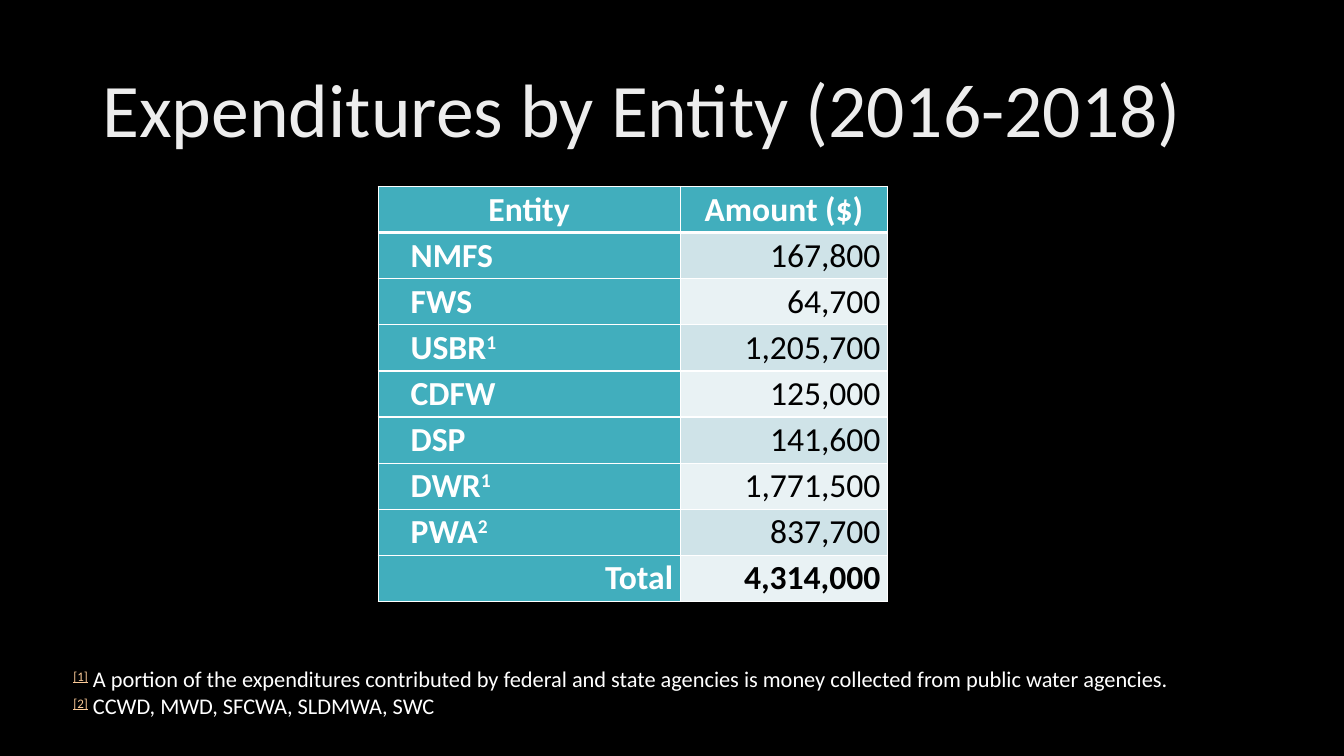
from lxml.etree import SubElement as Sub
from pptx import Presentation
from pptx.dml.color import RGBColor as RGB
from pptx.enum.text import MSO_ANCHOR as Anchor, PP_ALIGN as Align
from pptx.oxml.ns import qn
from pptx.util import Cm, Pt

WHITE, BLACK, TEAL, PEACH = "FFFFFF", "000000", "41AEBD", "FBCA98"
BANDS = "CFE3E8", "E9F2F4"

# Entity, footnote mark, amount
ROWS = [
    ("NMFS", "", "167,800"),
    ("FWS", "", "64,700"),
    ("USBR", "1", "1,205,700"),
    ("CDFW", "", "125,000"),
    ("DSP", "", "141,600"),
    ("DWR", "1", "1,771,500"),
    ("PWA", "2", "837,700"),
    ("Total", "", "4,314,000"),
]
NOTES = [
    ("[1]", " A portion of the expenditures contributed by federal and state "
            "agencies is money collected from public water agencies."),
    ("[2]", " CCWD, MWD, SFCWA, SLDMWA, SWC"),
]


def color(code):
    return RGB.from_string(code)


def write(para, text, size=24, ink=WHITE, bold=False, line=False, raised=False):
    run = para.add_run()
    run.text = text
    font = run.font
    font.name, font.size = "Calibri", Pt(size)
    font.bold, font.underline = bold, line
    font.color.rgb = color(ink)
    if raised:
        run._r.get_or_add_rPr().set("baseline", "30000")


def add_box(slide, left, top, width, height):
    frame = slide.shapes.add_textbox(left, top, width, height).text_frame
    frame.word_wrap = True
    frame.vertical_anchor = Anchor.MIDDLE
    return frame


def add_title(slide, *area):
    para = add_box(slide, *area).paragraphs[0]
    para.line_spacing = 0.9
    write(para, "Expenditures by Entity (2016-2018)", size=54, ink="EDEDED")


def style(cell, fill, align, head=False, indent=0):
    """Format a cell and return its paragraph."""
    cell.margin_left = cell.margin_right = Cm(0.18)
    cell.margin_top = cell.margin_bottom = 0
    cell.vertical_anchor = Anchor.MIDDLE
    # Borders come before the fill in the cell properties
    props = cell._tc.get_or_add_tcPr()
    for side in "LRTB":
        width = Pt(3 if head and side == "B" else 1)
        edge = Sub(props, qn(f"a:ln{side}"), w=str(width))
        paint = Sub(edge, qn("a:solidFill"))
        Sub(paint, qn("a:srgbClr"), val=WHITE)
    cell.fill.solid()
    cell.fill.fore_color.rgb = color(fill)
    para = cell.text_frame.paragraphs[0]
    para.alignment = align
    if indent:
        para._p.get_or_add_pPr().set("marL", str(indent))
    return para


def add_costs(slide, left, top, width, height):
    count = len(ROWS) + 1
    table = slide.shapes.add_table(count, 2, left, top, width, height).table
    table.first_row = table.horz_banding = False
    name_w = Cm(7.61)
    table.columns[0].width, table.columns[1].width = name_w, width - name_w
    for row in table.rows:
        row.height = height // count

    # Header
    for col, text in enumerate(("Entity", "Amount ($)")):
        para = style(table.cell(0, col), TEAL, Align.CENTER, head=True)
        write(para, text, bold=True)

    # Entities and total
    for num, (name, mark, amount) in enumerate(ROWS, 1):
        total = name == "Total"
        side = Align.RIGHT if total else Align.LEFT
        para = style(table.cell(num, 0), TEAL, side, indent=Cm(0.64))
        write(para, name, bold=True)
        if mark:
            write(para, mark, bold=True, raised=True)
        para = style(table.cell(num, 1), BANDS[(num - 1) % 2], Align.RIGHT)
        write(para, amount, ink=BLACK, bold=total)


def add_notes(slide, *area):
    frame = add_box(slide, *area)
    for num, (mark, text) in enumerate(NOTES):
        para = frame.add_paragraph() if num else frame.paragraphs[0]
        write(para, mark, size=16, ink=PEACH, line=True, raised=True)
        write(para, text, size=16)


def main():
    deck = Presentation()
    deck.slide_width, deck.slide_height = Cm(33.87), Cm(19.05)
    slide = deck.slides.add_slide(deck.slide_layouts[6])
    back = slide.background.fill
    back.solid()
    back.fore_color.rgb = color(BLACK)

    add_title(slide, Cm(2.33), Cm(1.01), Cm(29.21), Cm(3.68))
    add_costs(slide, Cm(9.53), Cm(4.7), Cm(12.84), Cm(10.46))
    add_notes(slide, Cm(1.6), Cm(16.64), Cm(29.21), Cm(1.62))
    deck.save("out.pptx")


if __name__ == "__main__":
    main()
